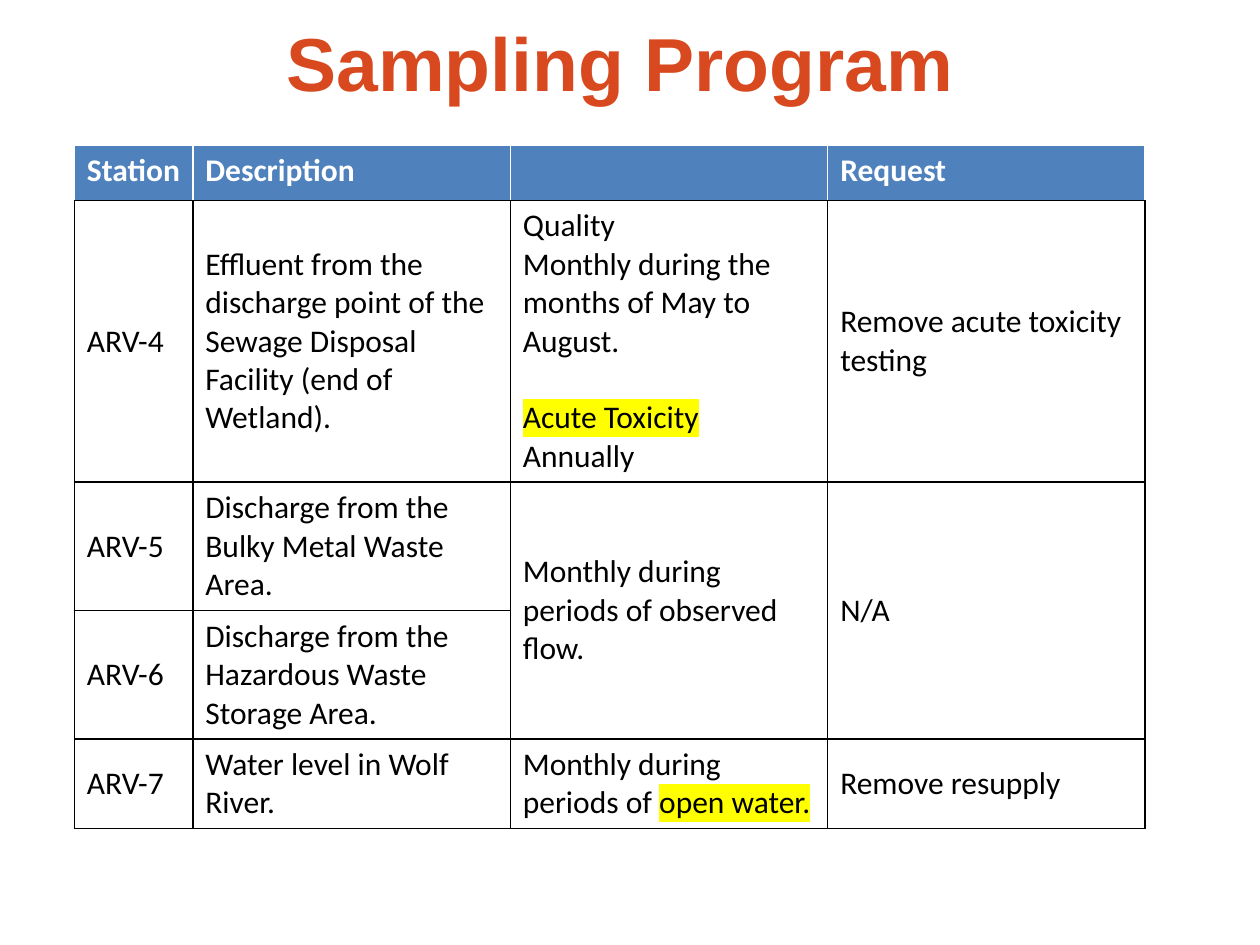
from lxml import etree
from pptx import Presentation
from pptx import util as u
from pptx.dml.color import RGBColor
from pptx.enum import text
from pptx.oxml import ns

ORANGE = RGBColor(0xD8, 0x49, 0x1F)
BLUE = RGBColor(0x4F, 0x81, 0xBD)
WHITE = RGBColor(0xFF, 0xFF, 0xFF)
BLACK = RGBColor(0, 0, 0)
YELLOW = RGBColor(0xFF, 0xFF, 0)
LINE_HEIGHT = 22

COLUMNS = [0.94, 2.52, 2.52, 2.52]
ROWS = [0.44, 2.23, 1.02, 1.02, 0.71]

# Each line of a cell is a paragraph; *...* marks highlighted words
PROGRAM = [
    ["Station", "Description", "", "Request"],
    ["ARV-4",
     "Effluent from the\ndischarge point of the\nSewage Disposal\nFacility (end of\nWetland).",
     "Quality\nMonthly during the\nmonths of May to\nAugust.\n*Acute Toxicity*\nAnnually",
     "Remove acute toxicity testing"],
    ["ARV-5", "Discharge from the\nBulky Metal Waste\nArea.",
     "Monthly during\nperiods of observed\nflow.", "N/A"],
    ["ARV-6", "Discharge from the\nHazardous Waste\nStorage Area.", "", ""],
    ["ARV-7", "Water level in Wolf\nRiver.",
     "Monthly during\nperiods of *open water.*", "Remove resupply"],
]


def add_fill(parent, tag, color):
    """Append a colour element, such as a:highlight, and return it."""
    element = etree.SubElement(parent, ns.qn(tag))
    etree.SubElement(element, ns.qn("a:srgbClr"), val=str(color))
    return element


def set_borders(cell, colors):
    """Draw 1 pt borders: left, right, top, bottom."""
    properties = cell._tc.get_or_add_tcPr()
    for index, (side, color) in enumerate(zip("LRTB", colors)):
        border = etree.Element(ns.qn(f"a:ln{side}"), w=str(u.Pt(1)))
        add_fill(border, "a:solidFill", color)
        properties.insert(index, border)


prs = Presentation()
prs.slide_width, prs.slide_height = u.Inches(10), u.Inches(7.5)
slide = prs.slides.add_slide(prs.slide_layouts[5])

# Title
title = slide.shapes.title
title.left, title.top = u.Inches(1.14), u.Inches(0.01)
title.width, title.height = u.Inches(7.56), u.Inches(0.95)
title.text_frame.vertical_anchor = text.MSO_ANCHOR.MIDDLE
heading = title.text_frame.paragraphs[0]
heading.alignment = text.PP_ALIGN.CENTER
heading_run = heading.add_run()
heading_run.text = "Sampling Program"
heading_run.font.name, heading_run.font.size = "Arial", u.Pt(42.9)
heading_run.font.bold = True
heading_run.font.color.rgb = ORANGE

# Station table
stations = slide.shapes.add_table(
    len(ROWS), len(COLUMNS), u.Inches(0.59), u.Inches(1.15),
    u.Inches(sum(COLUMNS)), u.Inches(sum(ROWS))).table
stations.horz_banding = False
for column, width in zip(stations.columns, COLUMNS):
    column.width = u.Inches(width)
for row, height in zip(stations.rows, ROWS):
    row.height = u.Inches(height)

# ARV-5 and ARV-6 share their schedule and request
for column in (2, 3):
    stations.cell(2, column).merge(stations.cell(3, column))

for r, entries in enumerate(PROGRAM):
    header = r == 0
    for c, entry in enumerate(entries):
        cell = stations.cell(r, c)
        if header:
            cell.fill.solid()
            cell.fill.fore_color.rgb = BLUE
            set_borders(cell, [WHITE, WHITE, WHITE, BLACK])
        else:
            cell.fill.background()
            cell.vertical_anchor = text.MSO_ANCHOR.MIDDLE
            set_borders(cell, [BLACK] * 4)
        if not entry:
            continue

        for n, line in enumerate(entry.split("\n")):
            frame = cell.text_frame
            paragraph = frame.add_paragraph() if n else frame.paragraphs[0]
            if line == "*Acute Toxicity*":
                paragraph.space_before = u.Pt(LINE_HEIGHT)
            for part, words in enumerate(line.split("*")):
                if not words:
                    continue
                run = paragraph.add_run()
                run.text = words
                run.font.name, run.font.size = "Calibri", u.Pt(18)
                run.font.bold = header
                run.font.color.rgb = WHITE if header else BLACK
                if part % 2:
                    run_properties = run._r.get_or_add_rPr()
                    highlight = add_fill(run_properties, "a:highlight", YELLOW)
                    run_properties.find(ns.qn("a:solidFill")).addnext(highlight)

prs.save("out.pptx")
